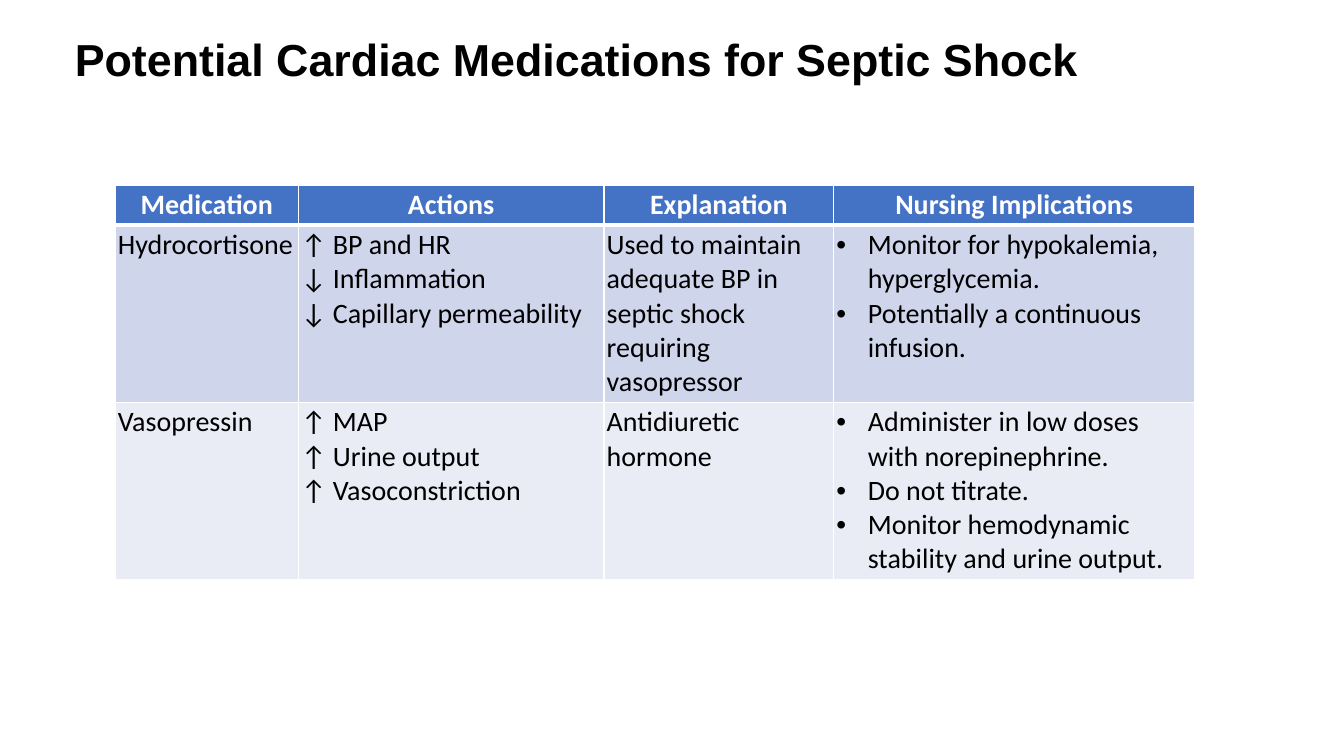
from lxml import etree
from pptx import Presentation
from pptx.dml.color import RGBColor
from pptx.enum.text import MSO_ANCHOR, PP_ALIGN
from pptx.oxml.ns import qn
from pptx.util import Cm, Pt

LEFT, CENTER = PP_ALIGN.LEFT, PP_ALIGN.CENTER
TOP, MIDDLE = MSO_ANCHOR.TOP, MSO_ANCHOR.MIDDLE

BLACK = RGBColor(0x00, 0x00, 0x00)
WHITE = RGBColor(0xFF, 0xFF, 0xFF)
HEADER_BLUE = RGBColor(0x44, 0x72, 0xC4)
BAND_COLORS = [RGBColor(0xCF, 0xD5, 0xEA), RGBColor(0xE9, 0xEB, 0xF5)]

COLUMN_WIDTHS = [Cm(4.62), Cm(7.7), Cm(5.79), Cm(9.1)]
ROW_HEIGHTS = [Cm(0.98), Cm(4.46), Cm(4.46)]
CELL_INSET = Cm(0.07)
BULLET_INDENT = Cm(0.79)
BULLET_COLUMN = 3

HEADINGS = ["Medication", "Actions", "Explanation", "Nursing Implications"]
MEDICATIONS = [
    [
        ["Hydrocortisone"],
        ["↑ BP and HR", "↓ Inflammation", "↓ Capillary permeability"],
        ["Used to maintain adequate BP in septic shock requiring vasopressor"],
        ["Monitor for hypokalemia, hyperglycemia.",
         "Potentially a continuous infusion."],
    ],
    [
        ["Vasopressin"],
        ["↑ MAP", "↑ Urine output", "↑ Vasoconstriction"],
        ["Antidiuretic hormone"],
        ["Administer in low doses with norepinephrine.",
         "Do not titrate.",
         "Monitor hemodynamic stability and urine output."],
    ],
]


def add_bullet(para):
    properties = para._p.get_or_add_pPr()
    properties.set("marL", str(BULLET_INDENT))
    properties.set("indent", str(-BULLET_INDENT))
    color = etree.SubElement(properties, qn("a:buClr"))
    etree.SubElement(color, qn("a:srgbClr"), val=str(BLACK))
    etree.SubElement(properties, qn("a:buFont"), typeface="Arial")
    etree.SubElement(properties, qn("a:buChar"), char="•")


def write_text(frame, lines, font="Calibri", size=20, color=BLACK,
               bold=False, align=LEFT, bullets=False):
    for index, line in enumerate(lines):
        para = frame.paragraphs[0] if index == 0 else frame.add_paragraph()
        para.alignment = align
        if bullets:
            add_bullet(para)
        span = para.add_run()
        span.text = line
        span.font.name = font
        span.font.size = Pt(size)
        span.font.bold = bold
        span.font.color.rgb = color


def set_borders(cell, bottom=1):
    properties = cell._tc.get_or_add_tcPr()
    for side, width in (("L", 1), ("R", 1), ("T", 1), ("B", bottom)):
        line = etree.SubElement(properties, qn(f"a:ln{side}"), w=str(Pt(width)))
        fill = etree.SubElement(line, qn("a:solidFill"))
        etree.SubElement(fill, qn("a:srgbClr"), val=str(WHITE))


def format_cell(cell, fill, bottom=1):
    cell.margin_left = cell.margin_right = CELL_INSET
    cell.margin_top = cell.margin_bottom = CELL_INSET
    cell.vertical_anchor = TOP
    set_borders(cell, bottom)
    cell.fill.solid()
    cell.fill.fore_color.rgb = fill


def add_title(page, text):
    title = page.shapes.title
    title.left, title.top = Cm(1.63), Cm(0.53)
    title.width, title.height = Cm(27.03), Cm(1.88)
    title.text_frame.vertical_anchor = MIDDLE
    write_text(title.text_frame, [text], font="Arial", size=32, bold=True)


def add_medication_table(page):
    table = page.shapes.add_table(
        len(ROW_HEIGHTS), len(COLUMN_WIDTHS), Cm(2.9), Cm(4.67),
        sum(COLUMN_WIDTHS), sum(ROW_HEIGHTS)).table
    for column, width in zip(table.columns, COLUMN_WIDTHS):
        column.width = width
    for row, height in zip(table.rows, ROW_HEIGHTS):
        row.height = height
    for index, heading in enumerate(HEADINGS):
        cell = table.cell(0, index)
        format_cell(cell, HEADER_BLUE, bottom=3)
        write_text(cell.text_frame, [heading], color=WHITE, bold=True,
                   align=CENTER)
    for row, (medication, band) in enumerate(zip(MEDICATIONS, BAND_COLORS), 1):
        for index, lines in enumerate(medication):
            cell = table.cell(row, index)
            format_cell(cell, band)
            write_text(cell.text_frame, lines, bullets=index == BULLET_COLUMN)


def main():
    deck = Presentation()
    deck.slide_width, deck.slide_height = Cm(33.87), Cm(19.05)
    page = deck.slides.add_slide(deck.slide_layouts[5])
    add_title(page, "Potential Cardiac Medications for Septic Shock")
    add_medication_table(page)
    deck.save("out.pptx")


if __name__ == "__main__":
    main()
